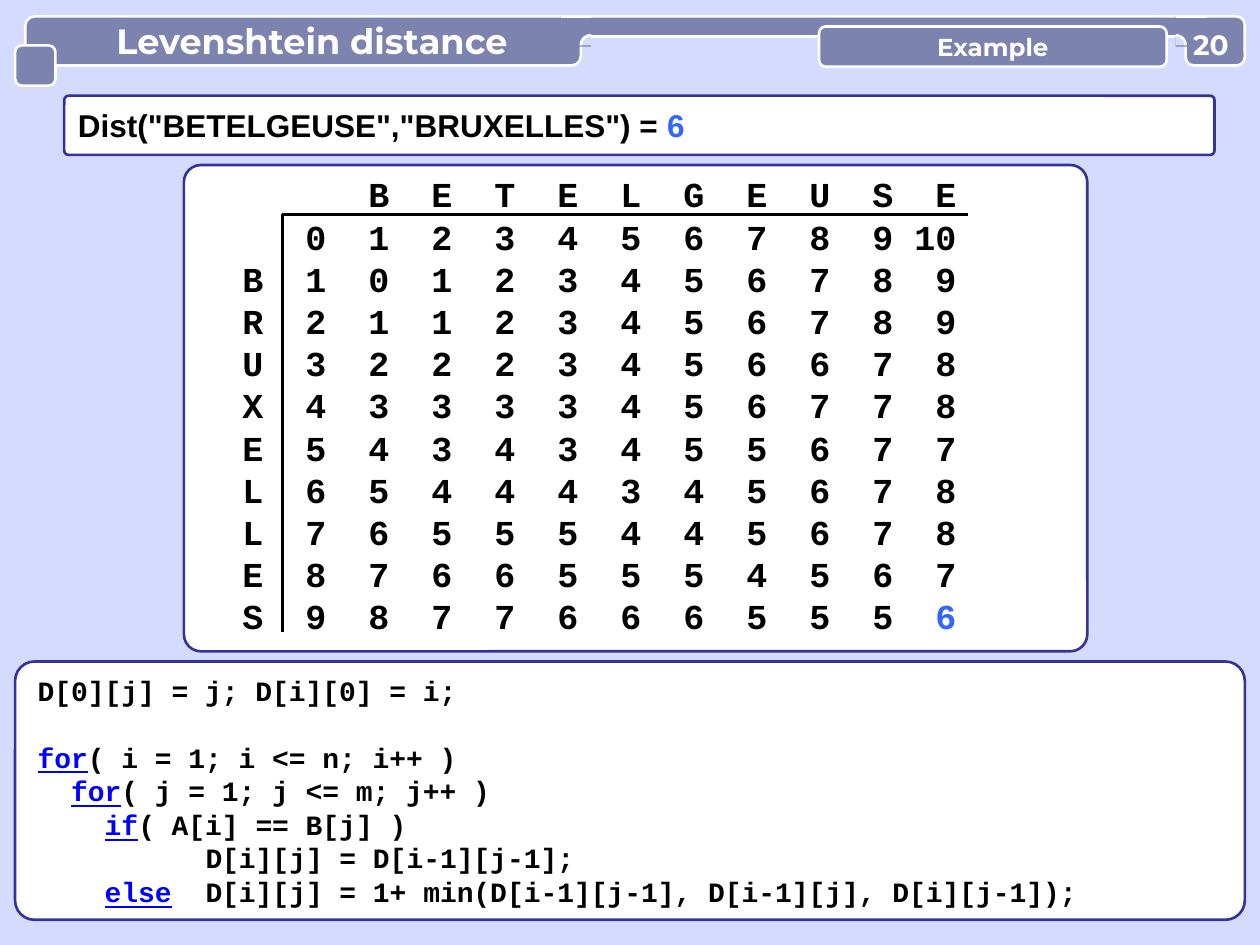
"""Build a slide on the Levenshtein distance with its matrix and its algorithm."""
import math
from typing import NamedTuple

import pptx
import pptx.dml.color
import pptx.enum.shapes
import pptx.enum.text
import pptx.oxml
import pptx.oxml.ns
import pptx.util

Inches = pptx.util.Inches
Pt = pptx.util.Pt
Kind = pptx.enum.shapes.MSO_SHAPE
Align = pptx.enum.text.PP_ALIGN
Anchor = pptx.enum.text.MSO_ANCHOR

COLORS = {
    "page": "D5DAFF", "bar": "7D83AF", "white": "FFFFFF", "border": "333399",
    "text": "000000", "result": "3366FF", "keyword": "0000FF",
}


class Box(NamedTuple):
    x: float
    y: float
    w: float
    h: float
    radius: float
    fill: str = "bar"
    line: str = "white"


class Style(NamedTuple):
    font: str
    size: int
    color: str = "text"


class CodeLine(NamedTuple):
    column: int
    keyword: str
    code: str
    hang: int = 0
    before: int = 0


TITLE = Box(0.2, 0.13, 4.41, 0.39, 0.188)
STRIP = Box(4.61, 0.13, 4.88, 0.16, 0.5)
KNOB = Box(0.12, 0.36, 0.32, 0.32, 0.17)
NUMBER = Box(9.41, 0.13, 0.47, 0.39, 0.17)
TOPIC = Box(6.5, 0.21, 2.76, 0.32, 0.17)
QUESTION = Box(0.51, 0.76, 9.13, 0.47, 0.075, "white", "border")
MATRIX = Box(1.46, 1.31, 7.17, 3.86, 0.035, "white", "border")
CODE = Box(0.12, 5.25, 9.76, 2.05, 0.075, "white", "border")

MONO = Style("Courier New", 20)
CODE_STYLE = Style("Courier New", 16)
CODE_CHAR = Pt(9.6)

ACROSS, DOWN = "BETELGEUSE", "BRUXELLES"
DISTANCES = [
    "0 1 2 3 4 5 6 7 8 9 10",
    "1 0 1 2 3 4 5 6 7 8 9",
    "2 1 1 2 3 4 5 6 7 8 9",
    "3 2 2 2 3 4 5 6 6 7 8",
    "4 3 3 3 3 4 5 6 7 7 8",
    "5 4 3 4 3 4 5 5 6 7 7",
    "6 5 4 4 4 3 4 5 6 7 8",
    "7 6 5 5 5 4 4 5 6 7 8",
    "8 7 6 6 5 5 5 4 5 6 7",
    "9 8 7 7 6 6 6 5 5 5 6",
]
CODE_LINES = [
    CodeLine(1, "", "D[0][j] = j; D[i][0] = i;"),
    CodeLine(1, "for", "( i = 1; i <= n; i++ )", before=19),
    CodeLine(3, "for", "( j = 1; j <= m; j++ )"),
    CodeLine(5, "if", "( A[i] == B[j] )"),
    CodeLine(11, "", "D[i][j] = D[i-1][j-1];"),
    CodeLine(5, "else", "\tD[i][j] = 1+ min(D[i-1][j-1], D[i-1][j], D[i][j-1]);", hang=6),
]


def rgb(name: str) -> pptx.dml.color.RGBColor:
    """Return a named colour."""
    return pptx.dml.color.RGBColor.from_string(COLORS[name])


def paint(s, fill: str = "", line: str = "") -> None:
    """Set fill and outline, leaving out whichever is not named."""
    s.shadow.inherit = False
    if fill:
        s.fill.solid()
        s.fill.fore_color.rgb = rgb(fill)
    else:
        s.fill.background()
    if line:
        s.line.color.rgb = rgb(line)
        s.line.width = Pt(1.5)
    else:
        s.line.fill.background()


def add_box(slide, box: Box):
    """Draw a rounded box."""
    s = slide.shapes.add_shape(Kind.ROUNDED_RECTANGLE, *map(Inches, box[:4]))
    s.adjustments[0] = box.radius
    paint(s, box.fill, box.line)
    s.text_frame.vertical_anchor = Anchor.MIDDLE
    return s


def add_run(p, text: str, style: Style, underline: bool = False) -> None:
    """Append a bold run to a paragraph."""
    r = p.add_run()
    r.text = text
    r.font.name, r.font.size, r.font.bold = style.font, Pt(style.size), True
    r.font.color.rgb = rgb(style.color)
    if underline:
        r.font.underline = True


def write(tf, text: str, style: Style, align=Align.LEFT):
    """Write the first paragraph of a text frame."""
    p = tf.paragraphs[0]
    p.alignment = align
    add_run(p, text, style)
    return p


def clear_margins(tf) -> None:
    """Remove the insets of a text frame or cell."""
    tf.margin_left = tf.margin_right = tf.margin_top = tf.margin_bottom = 0


def add_line(slide, x1: float, y1: float, x2: float, y2: float, color: str) -> None:
    """Draw a straight line."""
    s = slide.shapes.add_connector(
        pptx.enum.shapes.MSO_CONNECTOR.STRAIGHT, *map(Inches, (x1, y1, x2, y2)))
    s.line.color.rgb = rgb(color)
    s.line.width = Pt(1.5)
    pptx.oxml.ns.qn("a:effectLst")
    s.element.spPr.append(pptx.oxml.parse_xml(
        f"<a:effectLst {pptx.oxml.ns.nsdecls('a')}/>"))


def add_joint(slide, left: float, center: float, side: int) -> None:
    """Join the strip to a header box with a rounded inner corner."""
    top, width, base, radius = 0.13, 0.24, 0.36, 0.08
    s = slide.shapes.add_shape(Kind.RECTANGLE, *map(Inches, (left, top, width, width)))
    paint(s, "bar")
    add_line(slide, left, top, left + width, top, "white")
    angles = [math.radians(a) for a in range(0, 91, 10)]
    arc = [(Inches(center + side * radius * math.sin(a)),
            Inches(base - radius * math.cos(a))) for a in angles]
    corner = (Inches(center), Inches(base))
    for points, closed, fill, line in (
            (arc + [corner], True, "page", ""), (arc, False, "", "white")):
        builder = slide.shapes.build_freeform(*points[0], scale=1.0)
        builder.add_line_segments(points[1:], close=closed)
        paint(builder.convert_to_shape(), fill, line)


def add_matrix(slide) -> None:
    """Draw the distance matrix with its two axes."""
    add_box(slide, MATRIX)
    rows = [["", "", *ACROSS]]
    rows += [[label, *row.split()] for label, row in zip(" " + DOWN, DISTANCES)]
    rows[1][0] = ""
    last = (len(rows) - 1, len(rows[0]) - 1)
    table = slide.shapes.add_table(
        len(rows), len(rows[0]), *map(Inches, (1.59, 1.4, 6, 3.68))).table
    table.first_row = table.horz_banding = False
    for i, row in enumerate(rows):
        for j, text in enumerate(row):
            cell = table.cell(i, j)
            cell.fill.background()
            clear_margins(cell)
            cell.vertical_anchor = Anchor.MIDDLE
            style = MONO._replace(color="result") if (i, j) == last else MONO
            if text:
                write(cell.text_frame, text, style, Align.RIGHT)
            else:
                cell.text_frame.paragraphs[0].font.size = Pt(MONO.size)
    add_line(slide, 2.24, 1.7, 7.68, 1.7, "text")
    add_line(slide, 2.24, 5.02, 2.24, 1.7, "text")


def add_header(slide) -> None:
    """Draw the header with title, topic and slide number."""
    tf = add_box(slide, TITLE).text_frame
    tf.margin_left = Inches(0.24)
    write(tf, "Levenshtein distance", Style("Montserrat", 20, "white"), Align.CENTER)
    add_box(slide, STRIP)
    add_joint(slide, 4.45, 4.69, -1)
    add_box(slide, KNOB)
    add_box(slide, NUMBER)
    add_joint(slide, 9.33, 9.33, 1)
    tf = add_box(slide, TOPIC).text_frame
    write(tf, "Example", Style("Montserrat", 14, "white"), Align.CENTER)
    tf = slide.shapes.add_textbox(*map(Inches, (9.41, 0.22, 0.4, 0.27))).text_frame
    clear_margins(tf)
    tf.word_wrap, tf.vertical_anchor = True, Anchor.MIDDLE
    write(tf, "20", Style("Montserrat", 16, "white"), Align.CENTER)


def add_code(slide) -> None:
    """Write the algorithm, indented by character columns."""
    tf = add_box(slide, CODE).text_frame
    clear_margins(tf)
    for i, line in enumerate(CODE_LINES):
        p = tf.add_paragraph() if i else tf.paragraphs[0]
        p.alignment, p.space_before = Align.LEFT, Pt(line.before)
        pPr = p._p.get_or_add_pPr()
        pPr.set("marL", str((line.column + line.hang) * CODE_CHAR))
        pPr.set("indent", str(-line.hang * CODE_CHAR))
        if line.keyword:
            add_run(p, line.keyword, CODE_STYLE._replace(color="keyword"), True)
        add_run(p, line.code, CODE_STYLE)


def main() -> None:
    """Build and save the slide."""
    prs = pptx.Presentation()
    prs.slide_width, prs.slide_height = Inches(10), Inches(7.5)
    slide = prs.slides.add_slide(prs.slide_layouts[6])
    slide.background.fill.solid()
    slide.background.fill.fore_color.rgb = rgb("page")
    arial = Style("Arial", 18)
    p = write(add_box(slide, QUESTION).text_frame,
              'Dist("BETELGEUSE","BRUXELLES") = ', arial)
    add_run(p, "6", arial._replace(color="result"))
    add_matrix(slide)
    add_header(slide)
    add_code(slide)
    prs.save("out.pptx")


if __name__ == "__main__":
    main()
